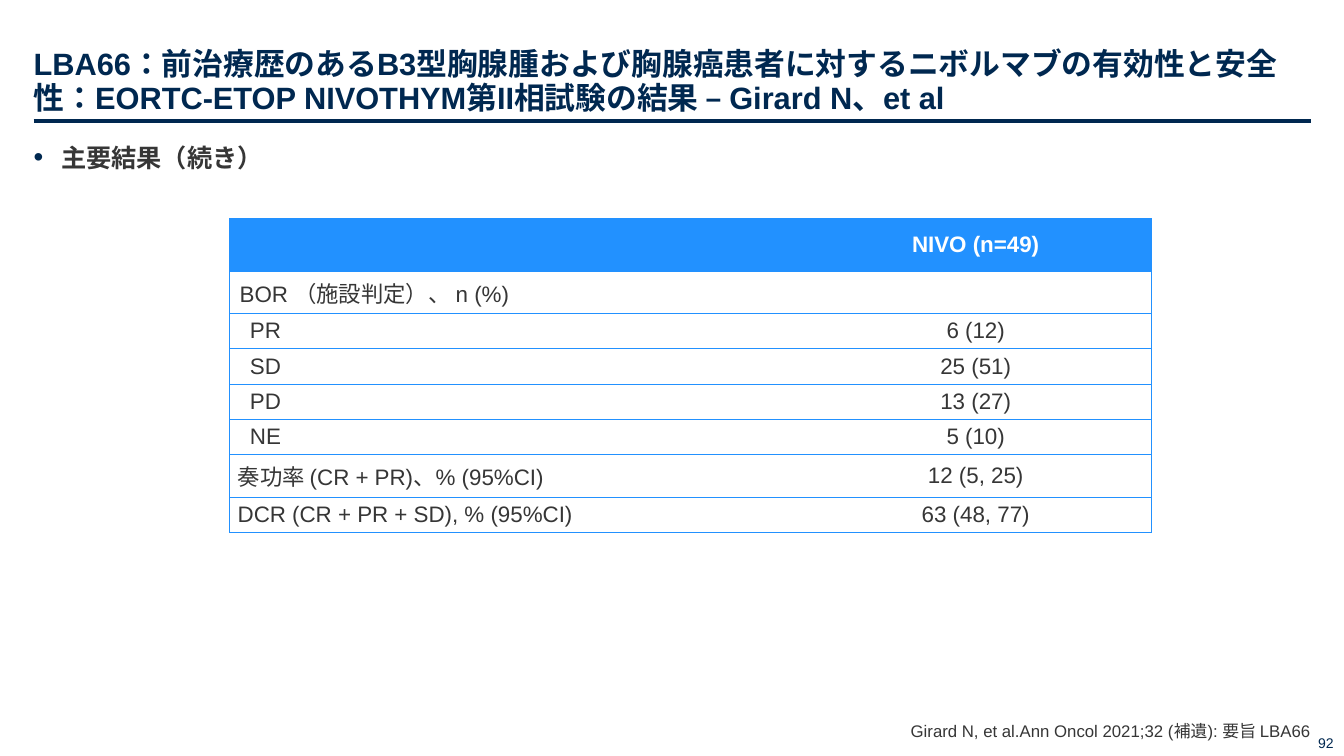
from dataclasses import dataclass

from lxml import etree
from pptx import Presentation
from pptx.dml.color import RGBColor
from pptx.enum.lang import MSO_LANGUAGE_ID
from pptx.enum.shapes import MSO_CONNECTOR
from pptx.enum.text import MSO_ANCHOR, MSO_AUTO_SIZE, PP_ALIGN
from pptx.oxml.ns import qn
from pptx.util import Cm, Pt

LEFT, CENTER, RIGHT = PP_ALIGN.LEFT, PP_ALIGN.CENTER, PP_ALIGN.RIGHT
TOP, MIDDLE, BOTTOM = MSO_ANCHOR.TOP, MSO_ANCHOR.MIDDLE, MSO_ANCHOR.BOTTOM
NO_FIT = MSO_AUTO_SIZE.NONE
STRAIGHT = MSO_CONNECTOR.STRAIGHT
JAPANESE = MSO_LANGUAGE_ID.JAPANESE

COLORS = {"navy": "002850", "text": "363636", "blue": "2291FF", "white": "FFFFFF"}
FONT = "Arial"
MARGIN, CONTENT_WIDTH = 0.85, 32.18
COLUMN_WIDTHS = (14.38, 8.84)
TALL_ROW, SHORT_ROW = 1.07, 0.89


@dataclass(frozen=True)
class ResultRow:
    label: str
    value: str
    height: float = SHORT_ROW
    inset: float = 0.2
    fill: str = "white"
    color: str = "text"
    bold: bool = False


RESULTS = (
    ResultRow("", "NIVO (n=49)", 1.32, fill="blue", color="white", bold=True),
    ResultRow("BOR （施設判定）、 n (%)", "", TALL_ROW, 0.25),
    ResultRow("PR", "6 (12)", inset=0.51),
    ResultRow("SD", "25 (51)", inset=0.51),
    ResultRow("PD", "13 (27)", inset=0.51),
    ResultRow("NE", "5 (10)", inset=0.51),
    ResultRow("奏功率 (CR + PR)、% (95%CI)", "12 (5, 25)", TALL_ROW),
    ResultRow("DCR (CR + PR + SD), % (95%CI)", "63 (48, 77)"),
)


def rgb(name: str) -> RGBColor:
    return RGBColor.from_string(COLORS[name])


def write_text(frame, text: str, *, size: float, color: str = "text",
               bold: bool = False, align=LEFT, before: float = 0,
               after: float = 0, spacing: float = 1.0):
    """Write one formatted paragraph and return it."""
    paragraph = frame.paragraphs[0]
    paragraph.alignment = align
    paragraph.space_before, paragraph.space_after = Pt(before), Pt(after)
    paragraph.line_spacing = spacing
    run = paragraph.add_run()
    run.text = text
    font = run.font
    font.name, font.size, font.bold = FONT, Pt(size), bold
    font.color.rgb = rgb(color)
    font.language_id = JAPANESE
    return paragraph


def place(shape, left: float, top: float, width: float, height: float,
          anchor=TOP, inset_top: float = 0, inset_bottom: float = 0):
    """Move a placeholder, set its margins and return its text frame."""
    shape.left, shape.top = Cm(left), Cm(top)
    shape.width, shape.height = Cm(width), Cm(height)
    frame = shape.text_frame
    frame.word_wrap, frame.auto_size = True, NO_FIT
    frame.vertical_anchor = anchor
    frame.margin_left = frame.margin_right = 0
    frame.margin_top, frame.margin_bottom = Cm(inset_top), Cm(inset_bottom)
    return frame


def set_bullet(paragraph, char: str = "", indent: float = 0) -> None:
    """Give a paragraph a navy bullet, or none when char is empty."""
    properties = paragraph._p.get_or_add_pPr()
    properties.set("marL", str(Cm(indent)))
    properties.set("indent", str(-Cm(indent)))
    if not char:
        etree.SubElement(properties, qn("a:buNone"))
        return
    color = etree.SubElement(properties, qn("a:buClr"))
    etree.SubElement(color, qn("a:srgbClr"), val=COLORS["navy"])
    etree.SubElement(properties, qn("a:buSzPct"), val="110000")
    etree.SubElement(properties, qn("a:buFont"), typeface=FONT)
    etree.SubElement(properties, qn("a:buChar"), char=char)


def set_borders(cell, visible_sides: str) -> None:
    """Draw blue lines on the given sides (L, R, T, B) and clear the others."""
    properties = cell._tc.get_or_add_tcPr()
    for index, side in enumerate("LRTB"):
        line = etree.Element(qn(f"a:ln{side}"), w=str(Pt(0.75)))
        if side in visible_sides:
            fill = etree.SubElement(line, qn("a:solidFill"))
            etree.SubElement(fill, qn("a:srgbClr"), val=COLORS["blue"])
        else:
            etree.SubElement(line, qn("a:noFill"))
        properties.insert(index, line)


def fill_cell(cell, text: str, row: ResultRow, align, sides: str, inset: float) -> None:
    cell.fill.solid()
    cell.fill.fore_color.rgb = rgb(row.fill)
    cell.vertical_anchor = MIDDLE
    cell.margin_left = Cm(inset)
    set_borders(cell, sides)
    if text:
        write_text(cell.text_frame, text, size=16, color=row.color,
                   bold=row.bold, align=align)


def add_results(slide) -> None:
    height = sum(row.height for row in RESULTS)
    table = slide.shapes.add_table(
        len(RESULTS), len(COLUMN_WIDTHS), Cm(5.79), Cm(5.51),
        Cm(sum(COLUMN_WIDTHS)), Cm(height)).table
    table.horz_banding = False
    for column, width in zip(table.columns, COLUMN_WIDTHS):
        column.width = Cm(width)
    for index, row in enumerate(RESULTS):
        table.rows[index].height = Cm(row.height)
        fill_cell(table.cell(index, 0), row.label, row, LEFT, "LTB", row.inset)
        fill_cell(table.cell(index, 1), row.value, row, CENTER, "RTB", 0.25)


def add_title_rule(slide) -> None:
    rule = slide.shapes.add_connector(
        STRAIGHT, Cm(MARGIN), Cm(3.05), Cm(MARGIN + CONTENT_WIDTH), Cm(3.05))
    rule.line.color.rgb = rgb("navy")
    rule.line.width = Pt(2.25)
    etree.SubElement(rule._element.spPr, qn("a:effectLst"))


def main() -> None:
    presentation = Presentation()
    presentation.slide_width, presentation.slide_height = Cm(33.87), Cm(19.05)
    slide = presentation.slides.add_slide(presentation.slide_layouts[3])
    title, findings, reference = slide.placeholders

    # Title and rule
    add_title_rule(slide)
    title_frame = place(title, MARGIN, 0.3, CONTENT_WIDTH, 2.62, BOTTOM, inset_top=0.13)
    write_text(title_frame,
               "LBA66：前治療歴のあるB3型胸腺腫および胸腺癌患者に対するニボルマブの有効性と安全性："
               "EORTC-ETOP NIVOTHYM第II相試験の結果 – Girard N、et al",
               size=22, color="navy", bold=True, spacing=0.9)

    # Key results
    findings_frame = place(findings, MARGIN, 3.45, CONTENT_WIDTH, 14.05,
                           inset_top=0.13, inset_bottom=0.13)
    heading = write_text(findings_frame, "主要結果（続き）", size=18, bold=True, after=6)
    set_bullet(heading, "•", 0.69)
    add_results(slide)

    # Reference
    reference_frame = place(reference, 17.73, 18.11, 15.29, 0.56, BOTTOM)
    citation = write_text(reference_frame,
                          "Girard N, et al.Ann Oncol 2021;32 (補遺): 要旨 LBA66",
                          size=12, align=RIGHT, before=6)
    set_bullet(citation)

    # Page number
    page = slide.shapes.add_textbox(Cm(32.21), Cm(18.03), Cm(1.65), Cm(1.02))
    page.text_frame.word_wrap = True
    page.text_frame.vertical_anchor = BOTTOM
    write_text(page.text_frame, "92", size=10, color="navy", align=RIGHT)

    presentation.save("out.pptx")


if __name__ == "__main__":
    main()
